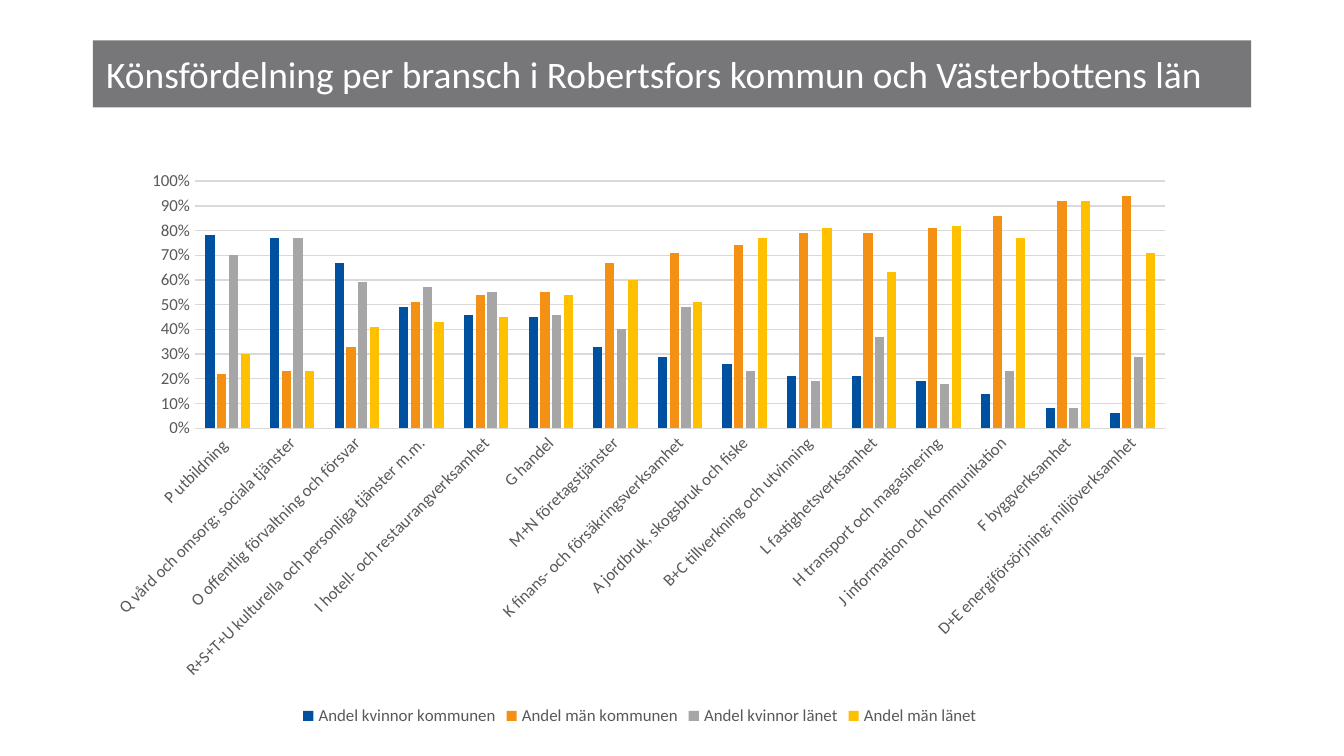
from pptx import Presentation
from pptx.chart.data import CategoryChartData
from pptx.dml.color import RGBColor
from pptx.enum.chart import XL_CHART_TYPE, XL_LEGEND_POSITION, XL_TICK_MARK
from pptx.enum.text import MSO_ANCHOR, MSO_AUTO_SIZE, PP_ALIGN
from pptx.util import Inches, Pt

FONT = "Calibri"
COLORS = {
    "banner": "77777A",
    "title": "FFFFFF",
    "label": "595959",
    "grid": "D9D9D9",
    "women_municipality": "0050A0",
    "men_municipality": "F49014",
    "women_county": "A6A6A6",
    "men_county": "FFC000",
}
INDUSTRIES = [
    "P utbildning ",
    "Q vård och omsorg; sociala tjänster",
    "O offentlig förvaltning och försvar",
    "R+S+T+U kulturella och personliga tjänster m.m.",
    "I hotell- och restaurangverksamhet",
    "G handel",
    "M+N företagstjänster",
    "K finans- och försäkringsverksamhet",
    "A jordbruk, skogsbruk och fiske",
    "B+C tillverkning och utvinning",
    "L fastighetsverksamhet",
    "H transport och magasinering",
    "J information och kommunikation",
    "F byggverksamhet",
    "D+E energiförsörjning; miljöverksamhet",
]
SHARES = [
    ("Andel kvinnor kommunen", "women_municipality",
     [0.78, 0.77, 0.67, 0.49, 0.46, 0.45, 0.33, 0.29, 0.26, 0.21, 0.21, 0.19, 0.14, 0.08, 0.06]),
    ("Andel män kommunen", "men_municipality",
     [0.22, 0.23, 0.33, 0.51, 0.54, 0.55, 0.67, 0.71, 0.74, 0.79, 0.79, 0.81, 0.86, 0.92, 0.94]),
    ("Andel kvinnor länet", "women_county",
     [0.7, 0.77, 0.59, 0.57, 0.55, 0.46, 0.4, 0.49, 0.23, 0.19, 0.37, 0.18, 0.23, 0.08, 0.29]),
    ("Andel män länet", "men_county",
     [0.3, 0.23, 0.41, 0.43, 0.45, 0.54, 0.6, 0.51, 0.77, 0.81, 0.63, 0.82, 0.77, 0.92, 0.71]),
]


def rgb(key):
    """Return the named colour."""
    return RGBColor.from_string(COLORS[key])


def style_font(font, size, color):
    """Apply the slide's typeface with a size and colour."""
    font.name = FONT
    font.size = Pt(size)
    font.color.rgb = rgb(color)


def write_text(frame, text, *, size, color, align=PP_ALIGN.LEFT, anchor=MSO_ANCHOR.MIDDLE):
    """Fill a text frame with one formatted paragraph."""
    frame.text = text
    frame.word_wrap = True
    frame.auto_size = MSO_AUTO_SIZE.NONE
    frame.vertical_anchor = anchor
    frame.paragraphs[0].alignment = align
    style_font(frame.paragraphs[0].runs[0].font, size, color)


def style_line(line, color):
    """Draw a thin line in the given colour."""
    line.color.rgb = rgb(color)
    line.width = Pt(0.75)


def place_title(slide, left, top, width, height):
    """Turn the title placeholder into a banner in the given box."""
    banner = slide.shapes.title
    banner.left, banner.top, banner.width, banner.height = left, top, width, height
    banner.fill.solid()
    banner.fill.fore_color.rgb = rgb("banner")
    write_text(banner.text_frame,
               "Könsfördelning per bransch i Robertsfors kommun och Västerbottens län",
               size=20, color="title")


def place_share_chart(slide, left, top, width, height):
    """Add the clustered columns of shares by industry in the given box."""
    shares = CategoryChartData(number_format="0%")
    shares.categories = INDUSTRIES
    for name, _, values in SHARES:
        shares.add_series(name, values)
    chart = slide.shapes.add_chart(
        XL_CHART_TYPE.COLUMN_CLUSTERED, left, top, width, height, shares).chart
    chart.has_title = False
    chart.font.name = FONT
    chart.font.size = Pt(10)

    columns = chart.plots[0]
    columns.gap_width = 219
    columns.overlap = -27
    columns.vary_by_categories = False
    for series, (_, color, _) in zip(columns.series, SHARES):
        series.format.fill.solid()
        series.format.fill.fore_color.rgb = rgb(color)

    industry_axis, share_axis = chart.category_axis, chart.value_axis
    for axis in (industry_axis, share_axis):
        axis.major_tick_mark = axis.minor_tick_mark = XL_TICK_MARK.NONE
        style_font(axis.tick_labels.font, 9, "label")
    style_line(industry_axis.format.line, "grid")
    for label_body in chart.element.xpath(".//c:catAx/c:txPr/a:bodyPr"):
        label_body.set("rot", "-2700000")
        label_body.set("vert", "horz")

    share_axis.minimum_scale, share_axis.maximum_scale = 0, 1
    share_axis.major_unit = 0.1
    share_axis.tick_labels.number_format = "0%"
    share_axis.tick_labels.number_format_is_linked = False
    share_axis.format.line.fill.background()
    style_line(share_axis.major_gridlines.format.line, "grid")

    chart.has_legend = True
    chart.legend.position = XL_LEGEND_POSITION.BOTTOM
    chart.legend.include_in_layout = False
    style_font(chart.legend.font, 9, "label")


def main():
    """Build and save the widescreen slide."""
    deck = Presentation()
    deck.slide_width = Inches(10)
    deck.slide_height = deck.slide_width * 9 // 16
    slide = deck.slides.add_slide(deck.slide_layouts.get_by_name("Title Only"))
    place_title(slide, Inches(0.69), Inches(0.3), Inches(8.62), Inches(0.5))
    place_share_chart(slide, Inches(0.69), Inches(1.19), Inches(8.14), Inches(4.25))
    deck.save("out.pptx")


if __name__ == "__main__":
    main()
